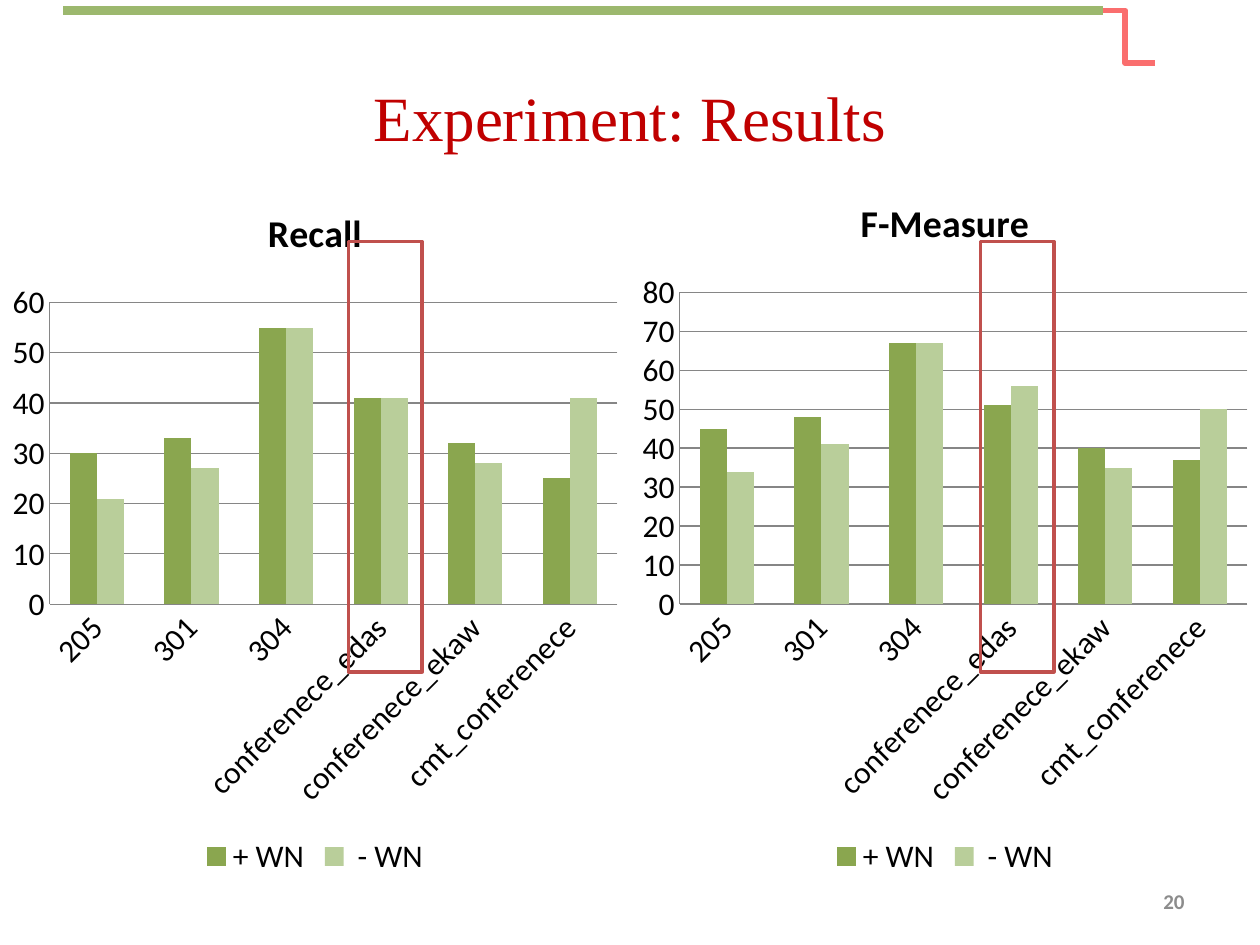
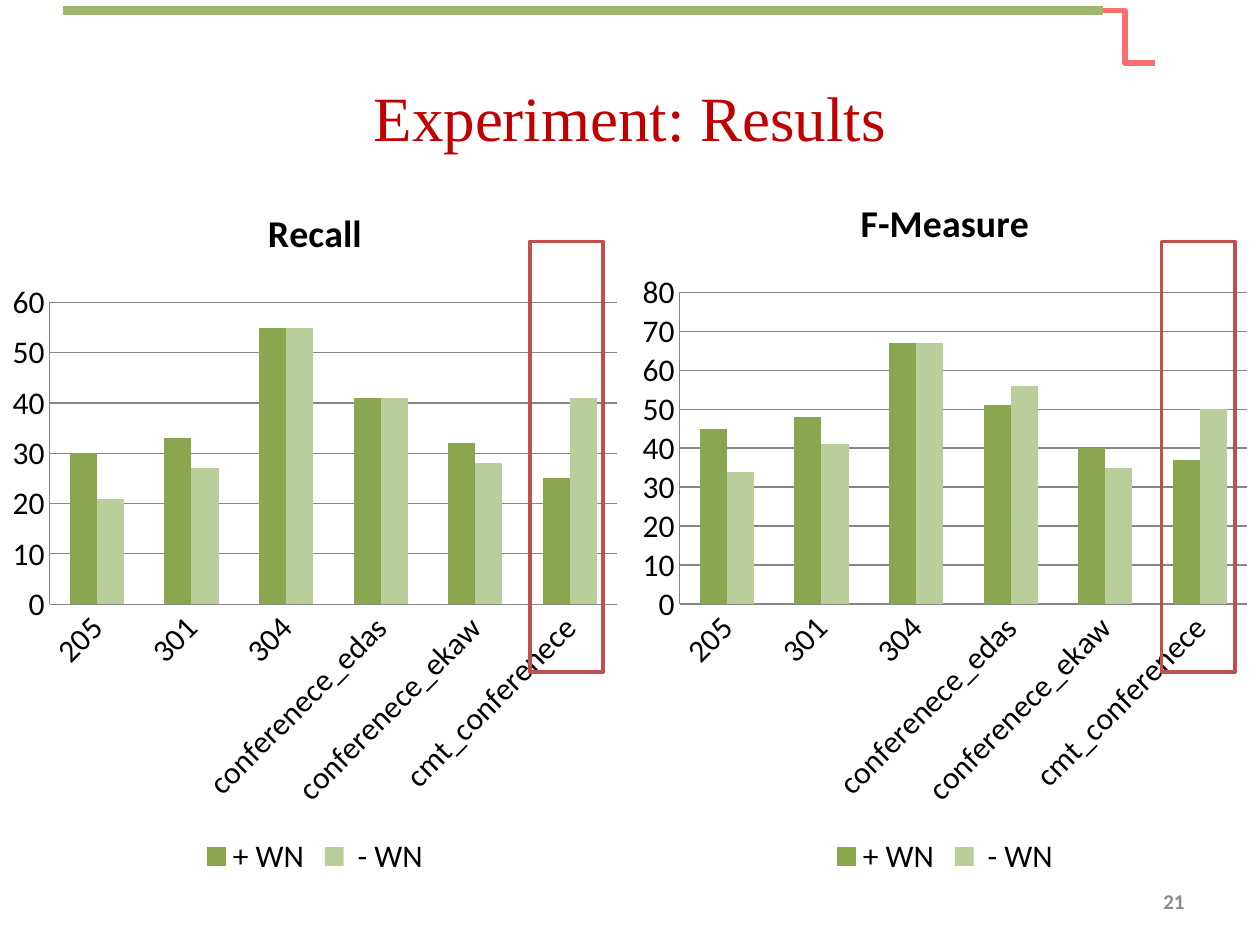
import pptx
import pptx.chart.data
import pptx.dml.color
import pptx.enum.chart
import pptx.enum.shapes
import pptx.enum.text
import pptx.oxml
import pptx.oxml.ns
import pptx.util

Pt = pptx.util.Pt
RGBColor = pptx.dml.color.RGBColor
PP_ALIGN = pptx.enum.text.PP_ALIGN
MSO_CONNECTOR = pptx.enum.shapes.MSO_CONNECTOR

BLACK = RGBColor(0x00, 0x00, 0x00)
TITLE_RED = RGBColor(0xC0, 0x00, 0x00)
BOX_RED = RGBColor(0xC0, 0x50, 0x4D)
HOOK_PINK = RGBColor(0xFA, 0x6E, 0x6E)
BAND_GREEN = RGBColor(0x9C, 0xB8, 0x6E)
NUMBER_GREY = RGBColor(0x8C, 0x8C, 0x8C)
AXIS_GREY = RGBColor(0x86, 0x86, 0x86)
BAR_COLORS = (RGBColor(0x8A, 0xA6, 0x4F), RGBColor(0xB9, 0xCE, 0x9A))

CATEGORIES = ("205", "301", "304", "conferenece_edas", "conferenece_ekaw",
              "cmt_conferenece")
SERIES_NAMES = ("+ WN", " - WN")
F_MEASURE = ((45, 48, 67, 51, 40, 37), (34, 41, 67, 56, 35, 50))
RECALL = ((30, 33, 55, 41, 32, 25), (21, 27, 55, 41, 28, 41))

# Highlight boxes step along the categories, once per chart
BOX_LEFT, BOX_STEP, BOX_CHART_GAP = 44, 51.75, 361


class Deck:
    def __init__(self):
        self.prs = pptx.Presentation()
        self.prs.slide_width, self.prs.slide_height = Pt(720), Pt(540)
        self.s = None

    def new_slide(self, title, number):
        """Start a slide with the shared band, title and page number."""
        self.s = self.prs.slides.add_slide(self.prs.slide_layouts[6])
        self.line(MSO_CONNECTOR.ELBOW, (660, 36), (626, 6), HOOK_PINK, 3.25)
        self.line(MSO_CONNECTOR.STRAIGHT, (36, 6), (630, 6), BAND_GREEN, 4.75)
        self.text((36, 21.6, 648, 90), title, "Times New Roman", 36,
                  TITLE_RED, PP_ALIGN.CENTER)
        self.text((642, 500.5, 42, 28.8), str(number), "Calibri", 12,
                  NUMBER_GREY, PP_ALIGN.RIGHT, bold=True)

    def line(self, kind, start, end, color, width):
        sp = self.s.shapes.add_connector(
            kind, *(Pt(v) for v in start + end))
        sp.line.color.rgb = color
        sp.line.width = Pt(width)
        sp._element.spPr.append(pptx.oxml.parse_xml(
            "<a:effectLst %s/>" % pptx.oxml.ns.nsdecls("a")))

    def text(self, box, words, font, size, color, align, bold=False):
        tf = self.s.shapes.add_textbox(*(Pt(v) for v in box)).text_frame
        tf.word_wrap = True
        tf.vertical_anchor = pptx.enum.text.MSO_ANCHOR.MIDDLE
        p = tf.paragraphs[0]
        p.alignment = align
        r = p.add_run()
        r.text = words
        self.style(r.font, size, color, bold, font)

    def style(self, font, size, color=BLACK, bold=False, name="Calibri"):
        font.name, font.size, font.bold = name, Pt(size), bold
        font.color.rgb = color

    def column_chart(self, box, title, values, top):
        data = pptx.chart.data.CategoryChartData()
        data.categories = CATEGORIES
        for name, vals in zip(SERIES_NAMES, values):
            data.add_series(name, vals)
        chart = self.s.shapes.add_chart(
            pptx.enum.chart.XL_CHART_TYPE.COLUMN_CLUSTERED,
            *(Pt(v) for v in box), data).chart
        self.style(chart.font, 18)

        chart.has_title = True
        r = chart.chart_title.text_frame.paragraphs[0].add_run()
        r.text = title
        self.style(r.font, 21.6, bold=True)

        chart.has_legend = True
        chart.legend.position = pptx.enum.chart.XL_LEGEND_POSITION.BOTTOM
        chart.legend.include_in_layout = False

        plot = chart.plots[0]
        plot.gap_width, plot.overlap = 150, 0
        plot.vary_by_categories = False
        for series, color in zip(plot.series, BAR_COLORS):
            series.format.fill.solid()
            series.format.fill.fore_color.rgb = color

        axis = chart.value_axis
        axis.minimum_scale, axis.maximum_scale, axis.major_unit = 0, top, 10
        axis.has_major_gridlines = True
        for ax in (axis, chart.category_axis):
            ax.major_tick_mark = pptx.enum.chart.XL_TICK_MARK.NONE
            ax.minor_tick_mark = pptx.enum.chart.XL_TICK_MARK.NONE
        for part in (axis, chart.category_axis, axis.major_gridlines):
            part.format.line.color.rgb = AXIS_GREY
            part.format.line.width = Pt(0.75)

    def highlight(self, left):
        sp = self.s.shapes.add_shape(
            pptx.enum.shapes.MSO_SHAPE.RECTANGLE,
            Pt(left), Pt(138), Pt(42), Pt(246))
        sp.shadow.inherit = False
        sp.fill.background()
        sp.line.color.rgb = BOX_RED
        sp.line.width = Pt(2)


def main():
    deck = Deck()
    for number, category in ((20, "conferenece_edas"),
                             (21, "cmt_conferenece")):
        deck.new_slide("Experiment: Results", number)
        deck.column_chart((360, 96, 360, 408), "F-Measure", F_MEASURE, 80)
        deck.column_chart((0, 102, 360, 402), "Recall", RECALL, 60)
        left = BOX_LEFT + BOX_STEP * CATEGORIES.index(category)
        for chart_index in range(2):
            deck.highlight(left + BOX_CHART_GAP * chart_index)
    deck.prs.save("out.pptx")


if __name__ == "__main__":
    main()
